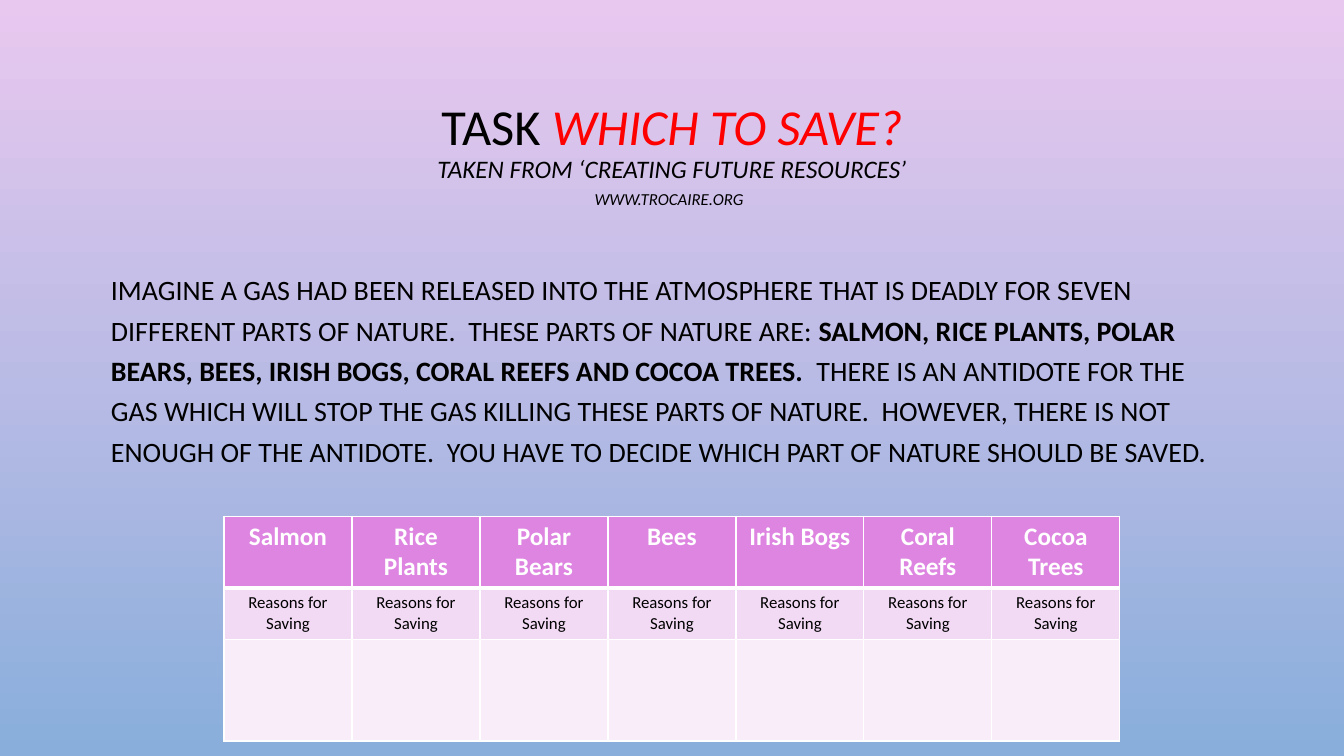
import pptx
import pptx.dml.color
import pptx.enum.text
import pptx.oxml
import pptx.oxml.ns
import pptx.util

RGBColor = pptx.dml.color.RGBColor
Inches = pptx.util.Inches
Pt = pptx.util.Pt
ALIGN = pptx.enum.text.PP_ALIGN
ANCHOR = pptx.enum.text.MSO_ANCHOR

BLACK = RGBColor(0x00, 0x00, 0x00)
WHITE = RGBColor(0xFF, 0xFF, 0xFF)
RED = RGBColor(0xFF, 0x00, 0x00)
SKY_TOP = RGBColor(0xE9, 0xC8, 0xEF)
SKY_BOTTOM = RGBColor(0x89, 0xAE, 0xDB)
HEADER_FILL = RGBColor(0xDE, 0x85, 0xE1)
REASON_FILL = RGBColor(0xF2, 0xD9, 0xF4)
ANSWER_FILL = RGBColor(0xF9, 0xED, 0xF9)

# Each title line is a list of (text, format)
TITLE_LINES = [
    [("TASK ", dict(size=36)),
     ("WHICH TO SAVE?", dict(size=36, color=RED, italic=True))],
    [("TAKEN FROM ‘CREATING FUTURE RESOURCES’", dict(size=18, italic=True))],
    [("WWW.TROCAIRE.ORG", dict(size=12, italic=True)),
     (" ", dict(size=18, italic=True))],
]
SCENARIO = [
    ("IMAGINE A GAS HAD BEEN RELEASED INTO THE ATMOSPHERE THAT IS DEADLY FOR "
     "SEVEN DIFFERENT PARTS OF NATURE.  THESE PARTS OF NATURE ARE: ", {}),
    ("SALMON, RICE PLANTS, POLAR BEARS, BEES, IRISH BOGS, CORAL REEFS AND "
     "COCOA TREES.", dict(bold=True)),
    ("  THERE IS AN ANTIDOTE FOR THE GAS WHICH WILL STOP THE GAS KILLING THESE "
     "PARTS OF NATURE.  HOWEVER, THERE IS NOT ENOUGH OF THE ANTIDOTE.  YOU HAVE "
     "TO DECIDE WHICH PART OF NATURE SHOULD BE SAVED.", {}),
]
PARTS_OF_NATURE = ["Salmon", "Rice Plants", "Polar Bears", "Bees",
                   "Irish Bogs", "Coral Reefs", "Cocoa Trees"]
# (texts, row height, fill, text format, top border, bottom border)
TABLE_ROWS = [
    (PARTS_OF_NATURE, 0.7, HEADER_FILL,
     dict(size=18, color=WHITE, bold=True), 1, 3),
    (["Reasons for Saving"] * len(PARTS_OF_NATURE), 0.51, REASON_FILL,
     dict(size=12), 3, 1),
    ([""] * len(PARTS_OF_NATURE), 1.01, ANSWER_FILL, dict(size=18), 1, 1),
]

SLIDE_W, SLIDE_H = 13.33, 7.5
MARGIN = 1
TABLE_W = SLIDE_W * 2 / 3
TABLE_TOP = 5.12


def add_text(paragraph, text, size=20, color=BLACK, bold=False, italic=False):
    run = paragraph.add_run()
    run.text = text
    font = run.font
    font.name, font.size = "Calibri", Pt(size)
    font.bold, font.italic = bold, italic
    font.color.rgb = color


def place(placeholder, top, height, anchor):
    """Move a placeholder between the margins and return its first paragraph."""
    placeholder.left, placeholder.top = Inches(MARGIN), Inches(top)
    placeholder.width = Inches(SLIDE_W - 2 * MARGIN)
    placeholder.height = Inches(height)
    frame = placeholder.text_frame
    frame.word_wrap = True
    frame.auto_size = pptx.enum.text.MSO_AUTO_SIZE.NONE
    frame.vertical_anchor = anchor
    return frame.paragraphs[0]


def add_border(cell, side, width):
    cell._tc.get_or_add_tcPr().append(pptx.oxml.parse_xml(
        f'<a:ln{side} {pptx.oxml.ns.nsdecls("a")} w="{Pt(width)}">'
        f'<a:solidFill><a:srgbClr val="{WHITE}"/></a:solidFill></a:ln{side}>'))


def add_title(slide):
    heading = place(slide.shapes.title, 0.68, 1.75, ANCHOR.MIDDLE)
    heading.alignment = ALIGN.CENTER
    heading.line_spacing = 0.9
    for number, line in enumerate(TITLE_LINES):
        if number:
            heading.add_line_break()
        for text, style in line:
            add_text(heading, text, **style)


def add_scenario(slide):
    scenario = place(slide.placeholders[1], 2.59, 3.74, ANCHOR.TOP)
    properties = scenario._p.get_or_add_pPr()
    properties.set("marL", "0")
    properties.set("indent", "0")
    properties.append(pptx.oxml.parse_xml(
        f'<a:buNone {pptx.oxml.ns.nsdecls("a")}/>'))
    scenario.alignment = ALIGN.LEFT
    scenario.line_spacing = 1.2
    scenario.space_before = Pt(0)
    for text, style in SCENARIO:
        add_text(scenario, text, **style)


def add_choices(slide):
    table = slide.shapes.add_table(
        len(TABLE_ROWS), len(PARTS_OF_NATURE),
        Inches((SLIDE_W - TABLE_W) / 2), Inches(TABLE_TOP), Inches(TABLE_W),
        Inches(sum(row[1] for row in TABLE_ROWS))).table
    for row, (texts, height, fill, style, above, below) in enumerate(TABLE_ROWS):
        table.rows[row].height = Inches(height)
        for column, text in enumerate(texts):
            cell = table.cell(row, column)
            for side, width in zip("LRTB", (1, 1, above, below)):
                add_border(cell, side, width)
            cell.fill.solid()
            cell.fill.fore_color.rgb = fill
            if text:
                label = cell.text_frame.paragraphs[0]
                label.alignment = ALIGN.CENTER
                add_text(label, text, **style)


def main():
    deck = pptx.Presentation()
    deck.slide_width, deck.slide_height = Inches(SLIDE_W), Inches(SLIDE_H)
    slide = deck.slides.add_slide(deck.slide_layouts[1])
    sky = slide.background.fill
    sky.gradient()
    sky.gradient_angle = 270
    for stop, color, position in zip(sky.gradient_stops,
                                     (SKY_TOP, SKY_BOTTOM), (0, 1)):
        stop.color.rgb = color
        stop.position = position
    add_title(slide)
    add_scenario(slide)
    add_choices(slide)
    deck.save("out.pptx")


if __name__ == "__main__":
    main()
